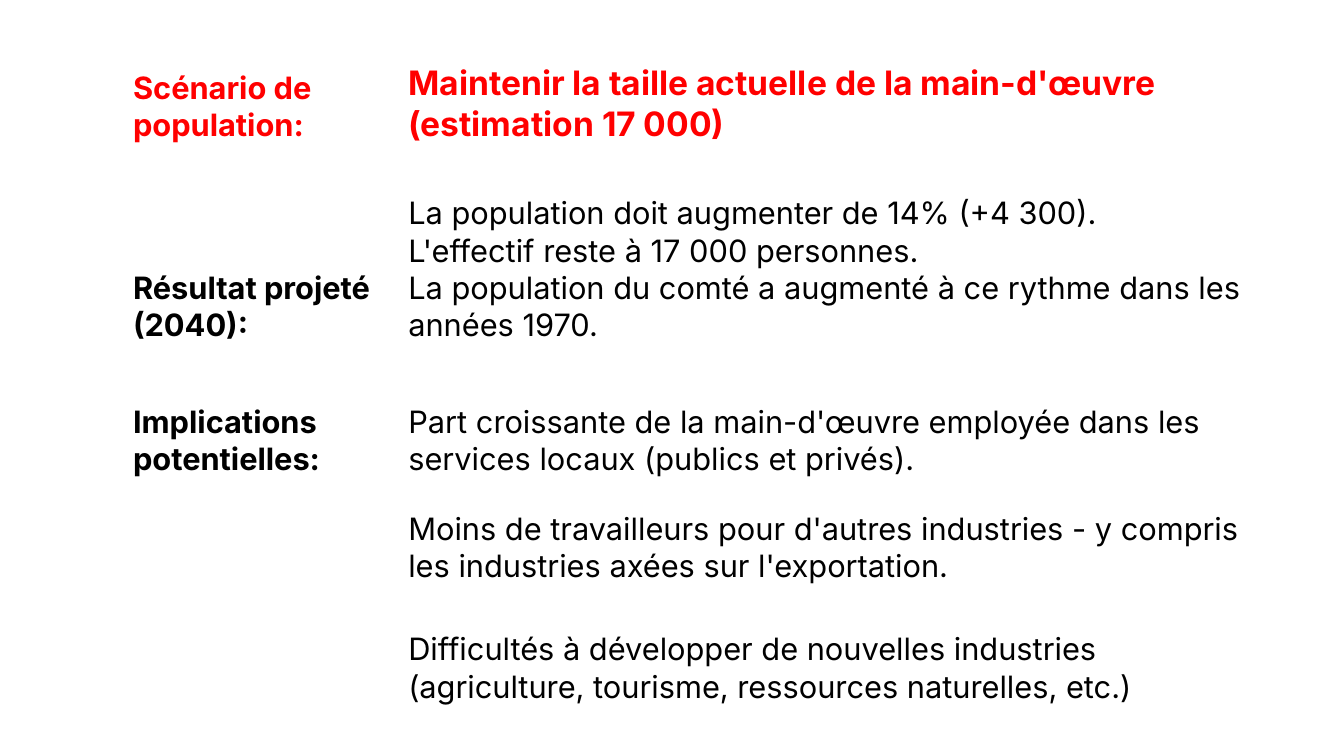
from dataclasses import dataclass

from lxml import etree
from pptx import Presentation
from pptx.dml.color import RGBColor
from pptx.enum.text import MSO_ANCHOR
from pptx.oxml import parse_xml
from pptx.util import Inches, Pt

BOTTOM = MSO_ANCHOR.BOTTOM
DRAWING_NS = "http://schemas.openxmlformats.org/drawingml/2006/main"


@dataclass(frozen=True)
class Theme:
    font: str = "Inter"
    accent: RGBColor = RGBColor(0xFF, 0x00, 0x00)
    text: RGBColor = RGBColor(0x00, 0x00, 0x00)
    border: str = "FFFFFF"
    body_size: int = 22
    heading_size: int = 24


theme = Theme()


def add_borders(cell):
    properties = cell._tc.get_or_add_tcPr()
    for side in ("lnL", "lnR", "lnT", "lnB"):
        line = parse_xml(f'<a:{side} xmlns:a="{DRAWING_NS}" w="{Pt(1)}"/>')
        fill = etree.SubElement(line, f"{{{DRAWING_NS}}}solidFill")
        etree.SubElement(fill, f"{{{DRAWING_NS}}}srgbClr", val=theme.border)
        properties.append(line)


presentation = Presentation()
presentation.slide_width = Inches(13.33)
presentation.slide_height = Inches(7.5)
slide = presentation.slides.add_slide(presentation.slide_layouts[6])

# Scenario content: row height, label, paragraphs
scenario_rows = [
    (1.1, "Scénario de population:",
     ["Maintenir la taille actuelle de la main-d'œuvre (estimation 17 000)"]),
    (1.98, "Résultat projeté (2040):",
     ["La population doit augmenter de 14% (+4 300).",
      "L'effectif reste à 17 000 personnes.",
      "La population du comté a augmenté à ce rythme dans les années 1970."]),
    (1.33, "Implications potentielles:",
     ["Part croissante de la main-d'œuvre employée dans les services locaux "
      "(publics et privés)."]),
    (1.06, "",
     ["Moins de travailleurs pour d'autres industries - y compris les "
      "industries axées sur l'exportation."]),
    (1.2, "",
     ["Difficultés à développer de nouvelles industries (agriculture, "
      "tourisme, ressources naturelles, etc.)"]),
]
column_widths = (2.73, 8.61)

# Table frame
scenario = slide.shapes.add_table(
    len(scenario_rows), len(column_widths), Inches(1.31), Inches(0.33),
    Inches(sum(column_widths)), Inches(sum(row[0] for row in scenario_rows)),
).table
scenario.first_row = False
scenario.horz_banding = False
for column, width in zip(scenario.columns, column_widths):
    column.width = Inches(width)

# Labels on the left, findings on the right
for row_index, (height, label, findings) in enumerate(scenario_rows):
    scenario.rows[row_index].height = Inches(height)
    is_heading = row_index == 0
    for column_index, lines in enumerate(([label], findings)):
        is_label = column_index == 0
        cell = scenario.cell(row_index, column_index)
        add_borders(cell)
        cell.fill.background()
        cell.vertical_anchor = BOTTOM
        cell.margin_left = cell.margin_right = cell.margin_top = Inches(0.01)
        cell.margin_bottom = 0
        cell.text = "\n".join(lines)
        for paragraph in cell.text_frame.paragraphs:
            font = paragraph.font
            font.name = theme.font
            font.size = Pt(theme.heading_size if is_heading and not is_label
                           else theme.body_size)
            font.bold = is_heading or is_label
            font.color.rgb = theme.accent if is_heading else theme.text

presentation.save("out.pptx")
